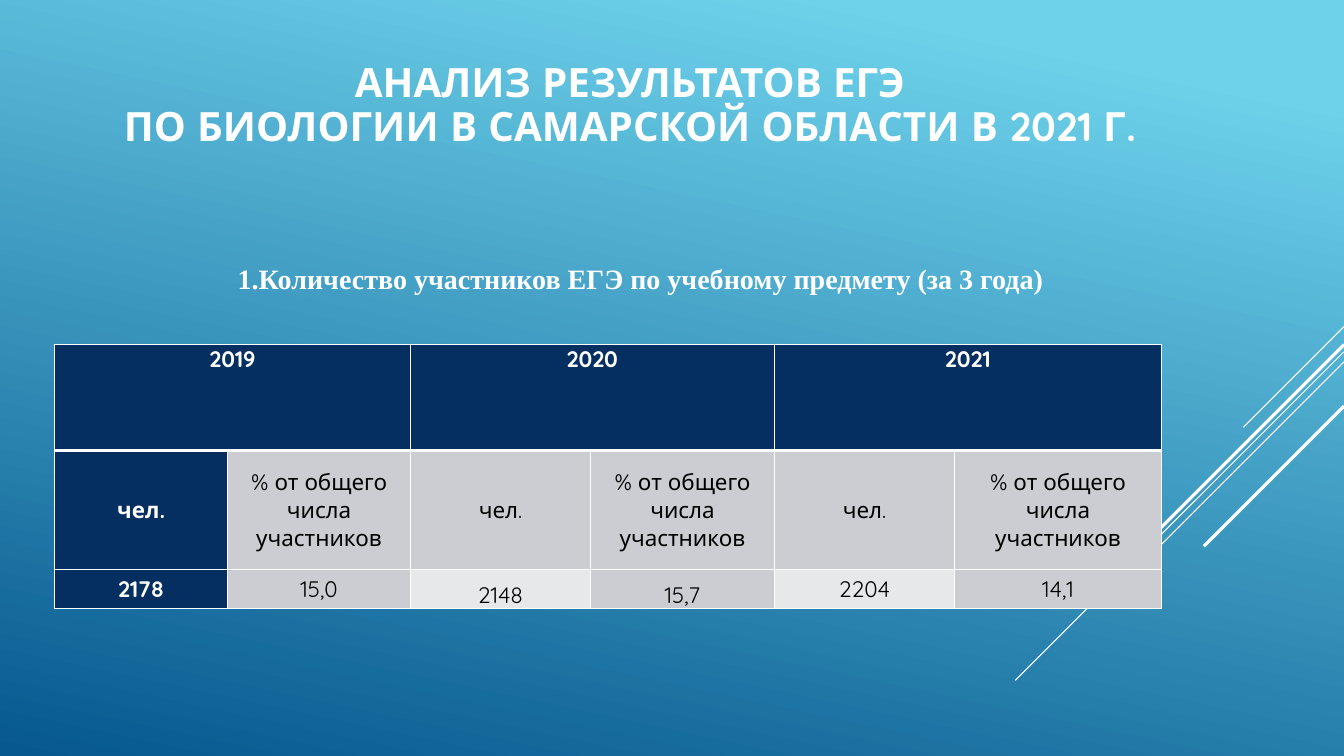
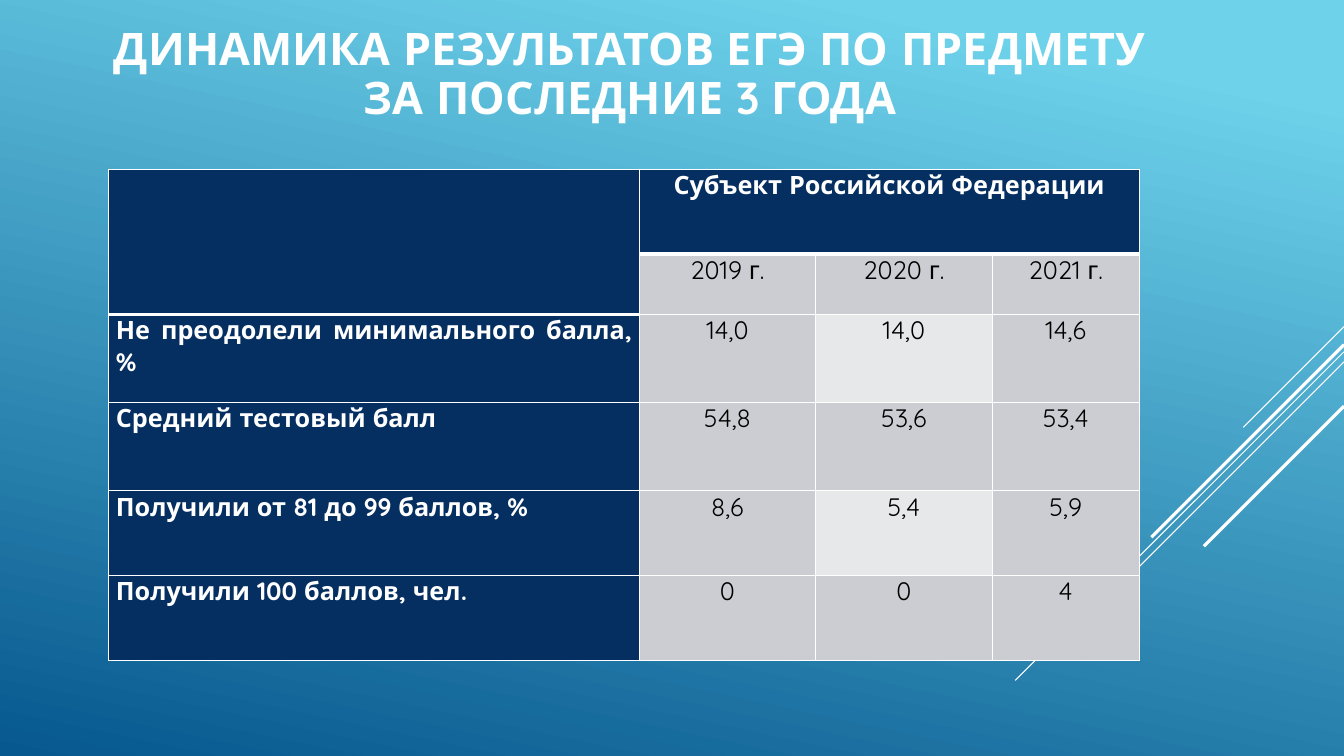
import pptx
import pptx.dml.color
import pptx.enum.shapes
import pptx.enum.text
import pptx.oxml
import pptx.oxml.ns
import pptx.util
import lxml.etree

Inches = pptx.util.Inches
Pt = pptx.util.Pt
ALIGN = pptx.enum.text.PP_ALIGN
ANCHOR = pptx.enum.text.MSO_ANCHOR

COLOURS = {
    "white": "FFFFFF",
    "black": "000000",
    "sky": "6ED2EB",
    "deep": "06588E",
    "navy": "052F61",
    "grey": "CCCDD2",
    "pale": "E7E8EA",
}
MAIN_FONT = "Quicksand"
SERIF_FONT = "Times New Roman"
RIGHT_EDGE = 13.33
RAYS = [
    (3.24, 1.0, 0.75),
    (3.49, 3.26, 0.75),
    (3.59, 2.07, 0.75),
    (3.42, 1.91, 2.25),
    (4.03, 1.39, 2.25),
]


def rgb(name):
    return pptx.dml.color.RGBColor.from_string(COLOURS[name])


def set_all(target, values):
    for name, value in values.items():
        setattr(target, name, value)


def paint_background(page):
    fill = page.background.fill
    fill.gradient()
    fill.gradient_angle = 360 - 102
    for stop, (position, colour) in zip(fill.gradient_stops, [(0.1, "sky"), (1, "deep")]):
        stop.position = position
        stop.color.rgb = rgb(colour)


def add_ray(page, top, reach, width):
    ray = page.shapes.add_connector(
        pptx.enum.shapes.MSO_CONNECTOR.STRAIGHT,
        Inches(RIGHT_EDGE), Inches(top), Inches(RIGHT_EDGE - reach), Inches(top + reach))
    ray.line.color.rgb = rgb("white")
    ray.line.width = Pt(width)
    lxml.etree.SubElement(ray._element.spPr, pptx.oxml.ns.qn("a:effectLst"))


def write(frame, text, size, colour="white", font=MAIN_FONT, bold=True, align=ALIGN.CENTER):
    para = frame.paragraphs[0]
    para.text = text
    para.alignment = align
    for span in para.runs:
        set_all(span.font, {"name": font, "size": Pt(size), "bold": bold})
        span.font.color.rgb = rgb(colour)
    return para


def add_text_frame(page, left, top, width, height):
    box = page.shapes.add_textbox(Inches(left), Inches(top), Inches(width), Inches(height))
    set_all(box.text_frame, {"word_wrap": True, "vertical_anchor": ANCHOR.MIDDLE})
    return box.text_frame


def add_page(deck, title, top, height, size):
    page = deck.slides.add_slide(deck.slide_layouts[6])
    paint_background(page)
    for ray in RAYS:
        add_ray(page, *ray)
    para = write(add_text_frame(page, 0.75, top, 11, height), title, size)
    para.line_spacing = 0.9
    return page


def add_numbered_heading(page, text):
    frame = add_text_frame(page, 1.76, 2.44, 9.46, 0.64)
    para = write(frame, text, 20, font=SERIF_FONT, align=ALIGN.LEFT)
    properties = para._p.get_or_add_pPr()
    properties.set("marL", str(Inches(0.5)))
    properties.set("indent", "0")
    numbering = lxml.etree.SubElement(properties, pptx.oxml.ns.qn("a:buAutoNum"))
    numbering.set("type", "arabicPeriod")


def set_borders(cell, top, bottom):
    properties = cell._tc.get_or_add_tcPr()
    for side, width in {"L": 1, "R": 1, "T": top, "B": bottom}.items():
        properties.append(pptx.oxml.parse_xml(
            f'<a:ln{side} {pptx.oxml.ns.nsdecls("a")} w="{Pt(width)}"><a:solidFill>'
            f'<a:srgbClr val="{COLOURS["white"]}"/></a:solidFill></a:ln{side}>'))


def add_grid(page, left, top, widths, heights, rows, size, header_depths,
             merges, pale_cells, anchors, label_align=ALIGN.CENTER):
    table = page.shapes.add_table(
        len(heights), len(widths), Inches(left), Inches(top),
        Inches(sum(widths)), Inches(sum(heights))).table
    set_all(table, {"first_row": False, "horz_banding": False})
    for column, width in zip(table.columns, widths):
        column.width = Inches(width)
    for line, height in zip(table.rows, heights):
        line.height = Inches(height)
    for r, texts in enumerate(rows):
        for c, text in enumerate(texts):
            cell = table.cell(r, c)
            depth = header_depths[c]
            navy = r < depth or c == 0
            set_all(cell, {
                "margin_left": Inches(0.07), "margin_right": Inches(0.07),
                "margin_top": 0, "margin_bottom": 0,
                "vertical_anchor": anchors.get((r, c), anchors.get(r, ANCHOR.TOP)),
            })
            set_borders(cell, 3 if r == depth else 1, 3 if r < depth else 1)
            cell.fill.solid()
            cell.fill.fore_color.rgb = rgb(
                "navy" if navy else "pale" if (r, c) in pale_cells else "grey")
            if text:
                write(cell.text_frame, text, size, "white" if navy else "black", bold=navy,
                      align=label_align if c == 0 else ALIGN.CENTER)
    for first, last in merges:
        table.cell(*first).merge(table.cell(*last))


def add_participants_page(deck):
    page = add_page(
        deck, "АНАЛИЗ РЕЗУЛЬТАТОВ ЕГЭ\nПО БИОЛОГИИ В САМАРСКОЙ ОБЛАСТИ В 2021 Г.",
        0.31, 1.49, 28.8)
    add_grid(
        page, 0.54, 3.42, [1.72, 1.81, 1.79, 1.82, 1.79, 2.05], [1.05, 1.18, 0.39],
        [["2019", "", "2020", "", "2021", ""],
         ["чел.", "% от общего числа участников"] * 3,
         ["2178", "15,0", "2148", "15,7", "2204", "14,1"]],
        size=16, header_depths=[1] * 6,
        merges=[((0, c), (0, c + 1)) for c in (0, 2, 4)],
        pale_cells={(2, 2), (2, 4)},
        anchors={1: ANCHOR.MIDDLE, 2: ANCHOR.MIDDLE,
                 (2, 2): ANCHOR.BOTTOM, (2, 3): ANCHOR.BOTTOM})
    add_numbered_heading(page, "Количество участников ЕГЭ по учебному предмету (за 3 года)")


def add_dynamics_page(deck):
    page = add_page(
        deck, "ДИНАМИКА РЕЗУЛЬТАТОВ ЕГЭ ПО ПРЕДМЕТУ ЗА ПОСЛЕДНИЕ 3 ГОДА", 0.12, 1.26, 32)
    add_grid(
        page, 1.08, 1.68, [5.26, 1.75, 1.75, 1.46], [0.84, 0.6, 0.87, 0.88, 0.84, 0.84],
        [["", "Субъект Российской Федерации", "", ""],
         ["", "2019 г.", "2020 г.", "2021 г."],
         ["Не преодолели минимального балла, %", "14,0", "14,0", "14,6"],
         ["Средний тестовый балл", "54,8", "53,6", "53,4"],
         ["Получили от 81 до 99 баллов, %", "8,6", "5,4", "5,9"],
         ["Получили 100 баллов, чел.", "0", "0", "4"]],
        size=18, header_depths=[2, 1, 1, 1],
        merges=[((0, 0), (1, 0)), ((0, 1), (0, 3))],
        pale_cells={(2, 2), (4, 2)}, anchors={}, label_align=ALIGN.JUSTIFY)


def main():
    deck = pptx.Presentation()
    set_all(deck, {"slide_width": Inches(13.33), "slide_height": Inches(7.5)})
    add_participants_page(deck)
    add_dynamics_page(deck)
    deck.save("out.pptx")


if __name__ == "__main__":
    main()
